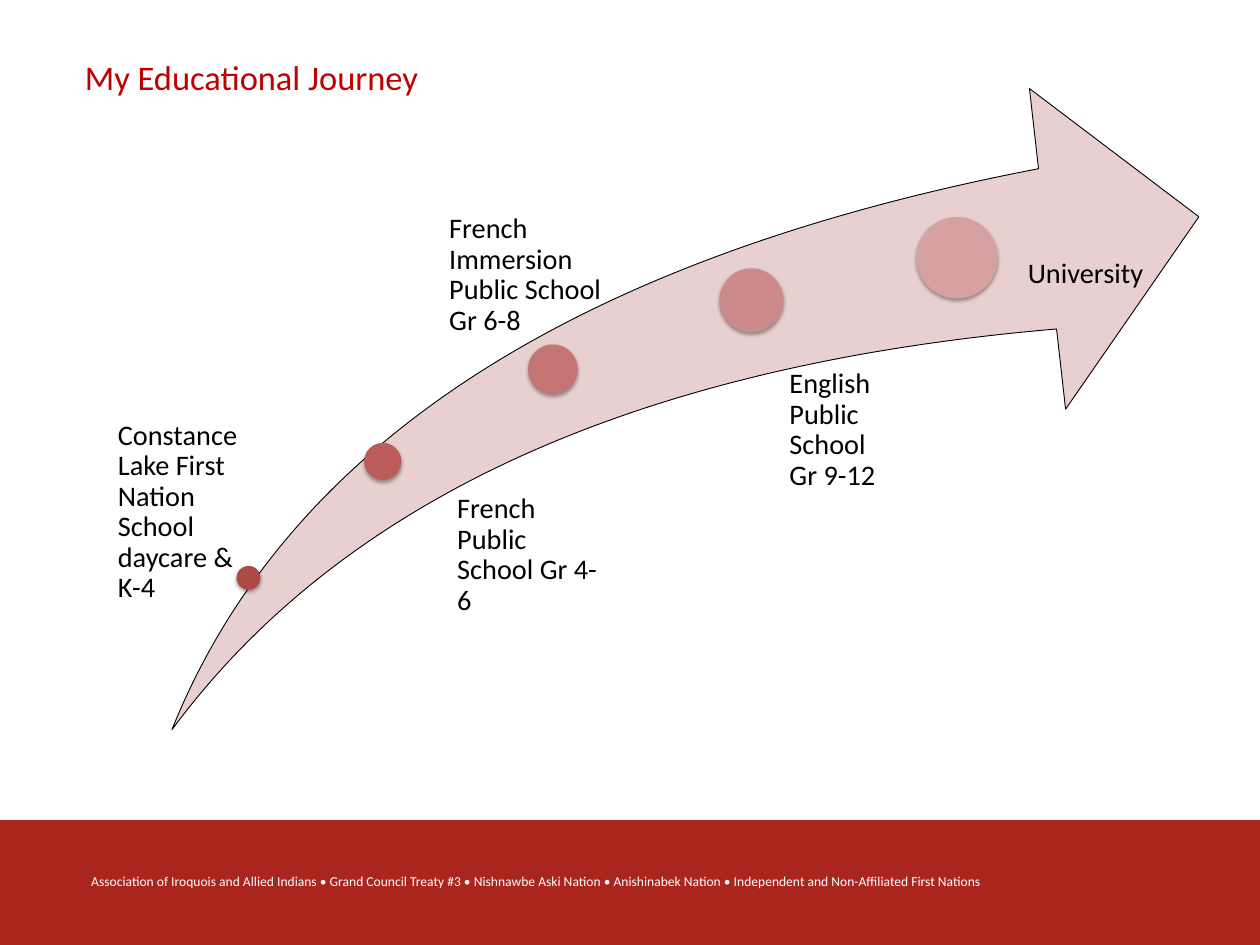
from lxml import etree
from pptx import Presentation
from pptx import util as u
from pptx.dml.color import RGBColor
from pptx.enum import shapes, text
from pptx.oxml import ns

BLACK = RGBColor(0x00, 0x00, 0x00)
WHITE = RGBColor(0xFF, 0xFF, 0xFF)
TITLE_RED = RGBColor(0xC0, 0x00, 0x00)
FOOTER_RED = RGBColor(0xAB, 0x25, 0x1F)
ARROW_PINK = RGBColor(0xE8, 0xD0, 0xD0)

COLUMNS, ROWS = 1422, 1067
CELL = u.Inches(0.01)
FOOTER_TOP = 926

presentation = Presentation()
presentation.slide_width = COLUMNS * CELL
presentation.slide_height = ROWS * CELL
slide = presentation.slides.add_slide(presentation.slide_layouts[6])


def add_text(words, box, size, color=BLACK, insets=(0, 0, 0, 0), line_spacing=None,
             align=text.PP_ALIGN.LEFT):
    shape = slide.shapes.add_textbox(*(cells * CELL for cells in box))
    frame = shape.text_frame
    frame.word_wrap = True
    frame.margin_left, frame.margin_top, frame.margin_right, frame.margin_bottom = (
        cells * CELL for cells in insets)
    paragraph = frame.paragraphs[0]
    paragraph.text = words
    paragraph.alignment = align
    paragraph.line_spacing = line_spacing
    paragraph.font.name = "Calibri"
    paragraph.font.size = u.Pt(size)
    paragraph.font.color.rgb = color


def add_preset(preset, box, fill):
    shape = slide.shapes.add_shape(preset, *(round(cells * CELL) for cells in box))
    shape.shadow.inherit = False
    shape.fill.solid()
    shape.fill.fore_color.rgb = fill
    shape.line.fill.background()
    return shape


add_preset(shapes.MSO_SHAPE.RECTANGLE,
           (0, FOOTER_TOP, COLUMNS, ROWS - FOOTER_TOP), FOOTER_RED)
add_text("Association of Iroquois and Allied Indians • Grand Council Treaty #3 • "
         "Nishnawbe Aski Nation • Anishinabek Nation • "
         "Independent and Non-Affiliated First Nations",
         (103, 986, 1083, 19), 11, WHITE, align=text.PP_ALIGN.JUSTIFY)

arrow = add_preset(shapes.MSO_SHAPE.SWOOSH_ARROW, (194, 100, 1159, 724), ARROW_PINK)
arrow.adjustments[0] = 0.25
arrow.adjustments[1] = 0.25
arrow.line.color.rgb = BLACK
arrow.line.width = u.Pt(0.75)

stages = [
    ("Constance Lake First Nation School daycare & K-4",
     (119, 475, 152, 272), 14, (280.5, 652.5), 27, RGBColor(0xAE, 0x49, 0x46)),
    ("French Public School Gr 4-6",
     (494, 558, 192, 279), 22, (432, 521), 42, RGBColor(0xBB, 0x5C, 0x5A)),
    ("French Immersion Public School Gr 6-8",
     (478, 242, 224, 407), 29, (624, 417), 56, RGBColor(0xC4, 0x74, 0x72)),
    ("English Public School Gr 9-12",
     (853, 417, 148, 397), 38, (848, 339), 72, RGBColor(0xCC, 0x8B, 0x8A)),
    ("University",
     (1111, 292, 232, 533), 49, (1080, 291), 92, RGBColor(0xD6, 0xA2, 0xA1)),
]
for words, label_box, indent, (center_x, center_y), diameter, color in stages:
    dot = add_preset(shapes.MSO_SHAPE.OVAL,
                     (center_x - diameter / 2, center_y - diameter / 2, diameter, diameter),
                     color)
    effects = dot._element.spPr.find(ns.qn("a:effectLst"))
    shadow = etree.SubElement(effects, ns.qn("a:outerShdw"), blurRad=str(u.Pt(3.1)),
                              dist=str(u.Pt(1.8)), dir="5400000", rotWithShape="0")
    shade = etree.SubElement(shadow, ns.qn("a:srgbClr"), val=str(BLACK))
    etree.SubElement(shade, ns.qn("a:alpha"), val="35000")
    add_text(words, label_box, 23, insets=(indent, 0, 0, 0), line_spacing=0.9)

add_text("My Educational Journey", (86, 58, 525, 57), 28, TITLE_RED, insets=(10, 5, 10, 5))

presentation.save("out.pptx")
